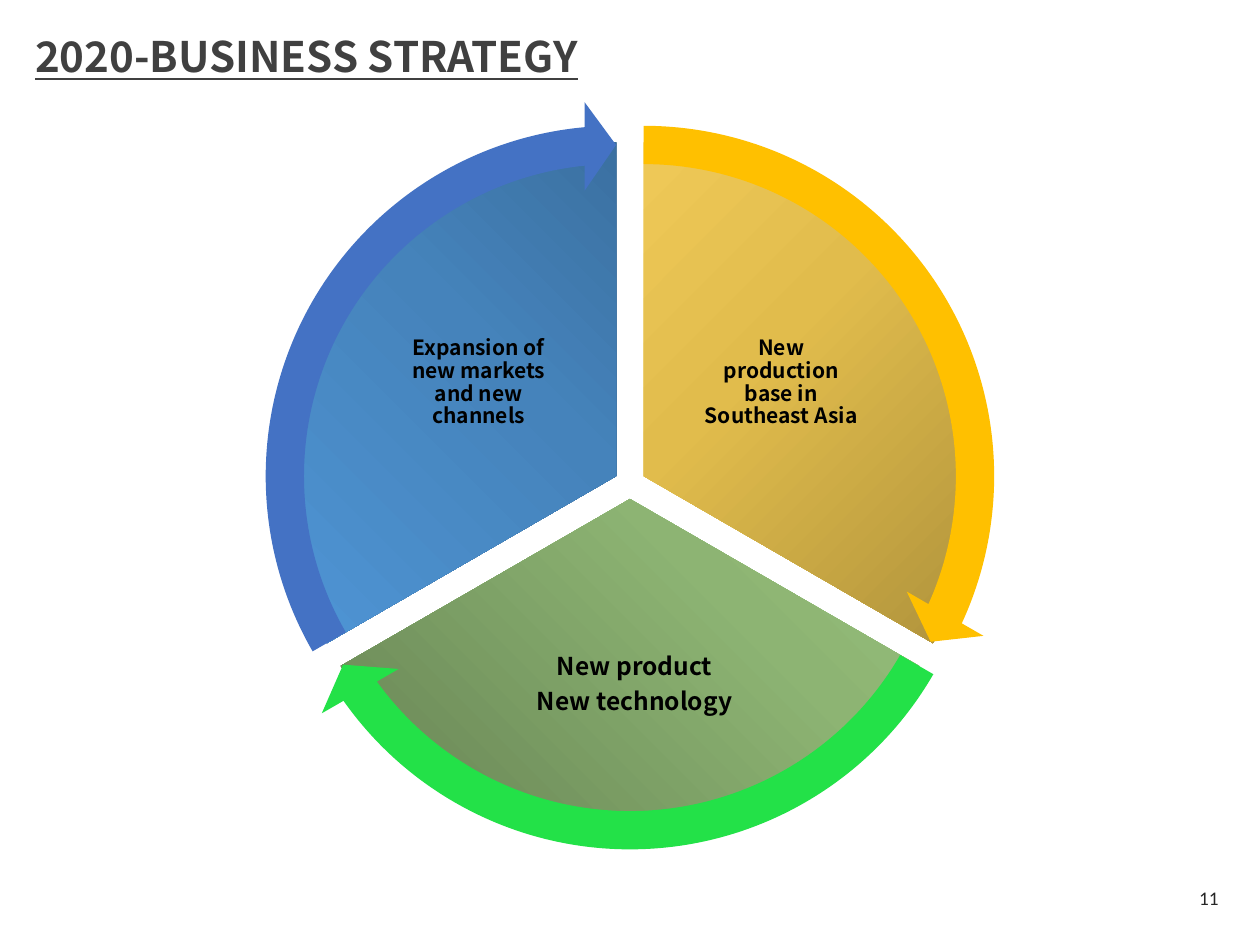
from pptx import Presentation
from pptx.dml.color import RGBColor
from pptx.enum.shapes import MSO_SHAPE
from pptx.enum.text import MSO_ANCHOR, PP_ALIGN
from pptx.oxml import parse_xml
from pptx.oxml.ns import nsdecls
from pptx.util import Cm, Pt


def color(value):
    return RGBColor.from_string(value)


def add_text(page, position, lines, font, size, ink, align, anchor, inset=None):
    box = page.shapes.add_textbox(*[Cm(length) for length in position])
    frame = box.text_frame
    frame.word_wrap = True
    frame.vertical_anchor = anchor
    if inset is not None:
        frame.margin_left = frame.margin_right = Cm(inset)
        frame.margin_top = frame.margin_bottom = Cm(inset)
    for index, line in enumerate(lines):
        para = frame.add_paragraph() if index else frame.paragraphs[0]
        para.text = line
        para.alignment = align
        para.font.name = font
        para.font.size = Pt(size)
        para.font.color.rgb = color(ink)
    return frame.paragraphs


HEADING_FONT = "Noto Sans CJK SC"
PIE_SIZE, ARROW_SIZE = 13.46, 15.14
ARROW_OFFSET = (ARROW_SIZE - PIE_SIZE) / 2
BOTTOM_RIGHT = '<a:path path="circle"><a:fillToRect l="100000" t="100000"/></a:path>'
BOTTOM_LEFT = '<a:path path="circle"><a:fillToRect t="100000" r="100000"/></a:path>'
DIAGONAL = '<a:lin ang="8100000" scaled="0"/>'

sectors = [
    {
        "corner": (6.25, 2.87), "angles": (162, 18),
        "shades": ("9E8436", "E1BC4C", "FFD966"), "direction": BOTTOM_RIGHT,
        "label": (14.05, 6.3, 3.4, 2.84), "size": 12,
        "lines": ["New production base in Southeast Asia"],
        "arrow": "FFC000", "arc": (14.725, 161.994),
    },
    {
        "corner": (5.97, 3.33), "angles": (18, 90),
        "shades": ("637F51", "8DB473", "A8D689"), "direction": BOTTOM_LEFT,
        "label": (10.24, 12.57, 5.11, 2.49), "size": 14,
        "lines": ["New product", "New technology"],
        "arrow": "23E148", "arc": (86.72, 18.005),
    },
    {
        "corner": (5.69, 2.87), "angles": (90, 162),
        "shades": ("305C84", "4583BB", "529BDE"), "direction": DIAGONAL,
        "label": (7.95, 6.3, 3.4, 2.84), "size": 12,
        "lines": ["Expansion of new markets and new channels"],
        "arrow": "4472C4", "arc": (158.73, 90),
    },
]

deck = Presentation()
deck.slide_width, deck.slide_height = Cm(25.4), Cm(19.05)
page = deck.slides.add_slide(deck.slide_layouts[6])

for sector in sectors:
    left, top = sector["corner"]
    pie = page.shapes.add_shape(
        MSO_SHAPE.PIE, Cm(left), Cm(top), Cm(PIE_SIZE), Cm(PIE_SIZE))
    pie.shadow.inherit = False
    pie.line.fill.background()
    pie.adjustments[0], pie.adjustments[1] = sector["angles"]
    stops = "".join(
        f'<a:gs pos="{place}"><a:srgbClr val="{shade}"/></a:gs>'
        for place, shade in zip((0, 50000, 100000), sector["shades"]))
    gradient = parse_xml(
        f'<a:gradFill {nsdecls("a")} rotWithShape="1">'
        f'<a:gsLst>{stops}</a:gsLst>{sector["direction"]}</a:gradFill>')
    pie.element.spPr.prstGeom.addnext(gradient)

    for para in add_text(page, sector["label"], sector["lines"], HEADING_FONT,
                         sector["size"], "000000", PP_ALIGN.CENTER,
                         MSO_ANCHOR.MIDDLE, 0.05):
        para.font.bold = True
        para.line_spacing = 0.9
        para.space_after = Pt(0.35 * sector["size"])

for sector in sectors:
    left, top = [length - ARROW_OFFSET for length in sector["corner"]]
    arrow = page.shapes.add_shape(
        MSO_SHAPE.CIRCULAR_ARROW, Cm(left), Cm(top), Cm(ARROW_SIZE), Cm(ARROW_SIZE))
    arrow.shadow.inherit = False
    arrow.line.fill.background()
    arrow.fill.solid()
    arrow.fill.fore_color.rgb = color(sector["arrow"])
    for index, value in enumerate((0.051, 3.275, *sector["arc"], 0.059)):
        arrow.adjustments[index] = value

add_text(page, (18.9, 17.58, 5.92, 1.02), ["11"], "Calibri", 11, "262626",
         PP_ALIGN.RIGHT, MSO_ANCHOR.MIDDLE)
title = add_text(page, (0.46, 0.61, 18.44, 1.47), ["2020-BUSINESS STRATEGY"],
                 HEADING_FONT, 24, "404040", PP_ALIGN.LEFT, MSO_ANCHOR.TOP)[0]
title.font.bold = True
title.font.underline = True
title.line_spacing = 0.9

deck.save("out.pptx")
